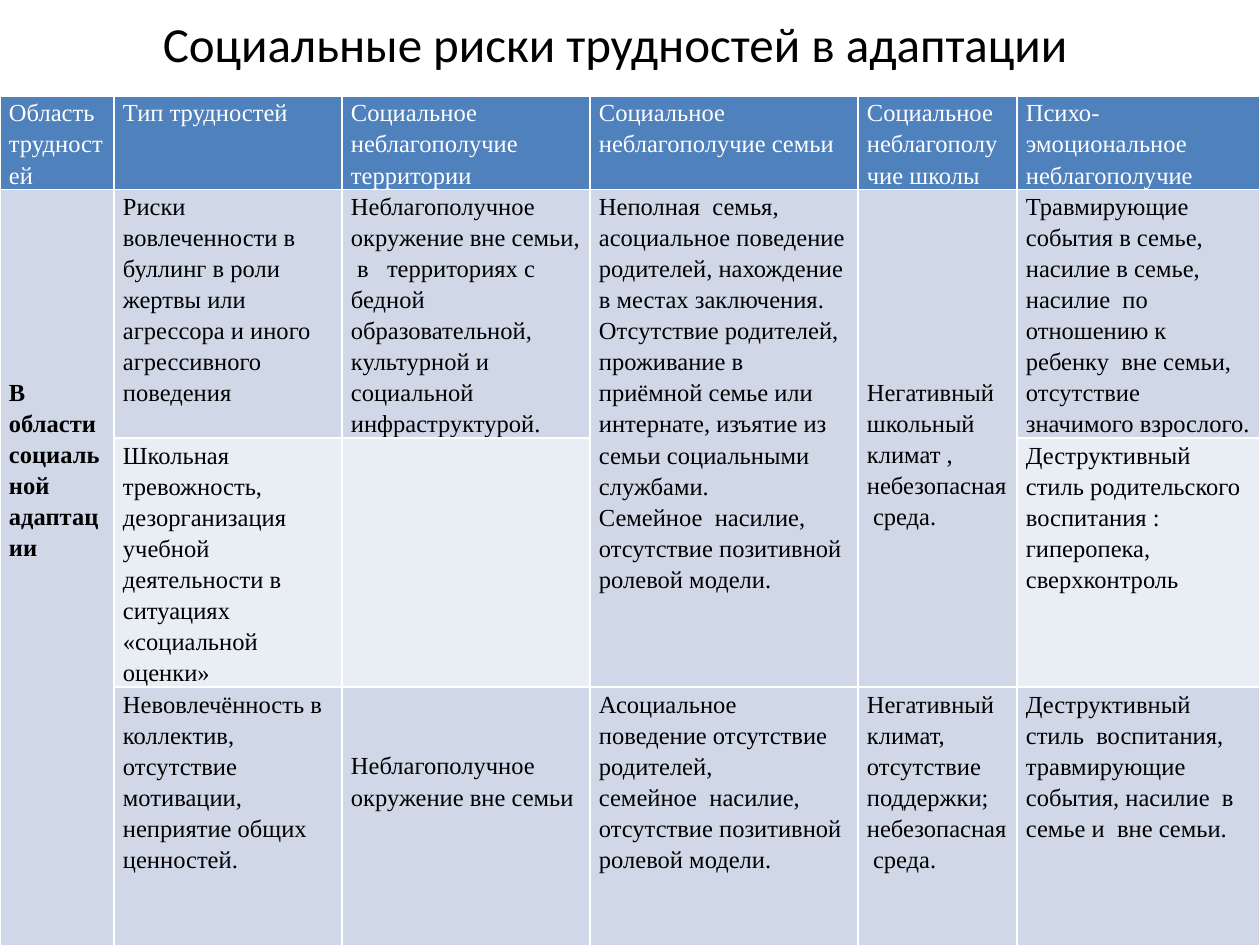
from pptx import Presentation
from pptx.dml.color import RGBColor
from pptx.enum.text import MSO_ANCHOR, PP_ALIGN
from pptx.util import Pt

PX = 914400 // 126
MIDDLE, TOP = MSO_ANCHOR.MIDDLE, MSO_ANCHOR.TOP
CENTER = PP_ALIGN.CENTER
TITLE_ONLY = 5
COLORS = {"header": "4F81BD", "band": "D0D8E8", "light": "E9EDF4",
          "white": "FFFFFF", "black": "000000"}
TITLE = "Социальные риски трудностей в адаптации "
COLUMN_WIDTHS = [114, 228, 248, 268, 159, 243]
ROW_HEIGHTS = [93, 248, 249, 306]
LINE_HEIGHT = 31
SIDE_MARGIN = 9
MERGES = [((1, 0), (3, 0)), ((1, 3), (2, 3)), ((1, 4), (2, 4))]
LINES_ABOVE = {(1, 0): 6, (1, 4): 6, (3, 2): 2}
RISKS = [
    ["Область трудностей", "Тип трудностей",
     "Социальное неблагополучие территории",
     "Социальное неблагополучие семьи",
     "Социальное неблагополучие школы",
     "Психо-эмоциональное неблагополучие"],
    ["В области социальной адаптации",
     "Риски вовлеченности в буллинг в роли жертвы или агрессора и иного "
     "агрессивного поведения",
     "Неблагополучное окружение вне семьи,  в   территориях с бедной "
     "образовательной, культурной и социальной инфраструктурой.",
     "Неполная  семья, асоциальное поведение родителей, нахождение в местах "
     "заключения.\nОтсутствие родителей, проживание в приёмной семье или "
     "интернате, изъятие из семьи социальными службами.\n"
     "Семейное  насилие, отсутствие позитивной ролевой модели.",
     "Негативный  школьный  климат , небезопасная  среда.",
     "Травмирующие  события в семье,\nнасилие в семье,\n"
     "насилие  по отношению к ребенку  вне семьи,\n"
     "отсутствие значимого взрослого."],
    ["",
     "Школьная тревожность,   дезорганизация  учебной деятельности в "
     "ситуациях «социальной оценки»",
     "", "", "",
     "Деструктивный  стиль родительского воспитания : гиперопека, "
     "сверхконтроль"],
    ["",
     "Невовлечённость в коллектив, отсутствие мотивации, неприятие общих "
     "ценностей.",
     "Неблагополучное окружение вне семьи",
     "Асоциальное поведение отсутствие родителей,\n"
     "семейное  насилие, отсутствие позитивной ролевой модели.",
     "Негативный   климат, отсутствие  поддержки; небезопасная  среда.",
     "Деструктивный стиль  воспитания,\n"
     "травмирующие события, насилие  в семье и  вне семьи."],
]


def format_run(run, font_name, size, color, bold=False):
    """Set the typeface, size, colour and weight of a run."""
    run.font.name = font_name
    run.font.size = Pt(size)
    run.font.bold = bold
    run.font.color.rgb = RGBColor.from_string(COLORS[color])


def place_title(slide, left, top, width, height):
    """Fill the title placeholder and fit it to the given box."""
    title = slide.shapes.title
    title.left, title.top = left * PX, top * PX
    title.width, title.height = width * PX, height * PX
    title.text_frame.text = TITLE
    title.text_frame.vertical_anchor = MIDDLE
    heading = title.text_frame.paragraphs[0]
    heading.alignment = CENTER
    format_run(heading.runs[0], "Calibri", 28, "black")


def fill_cell(cell, row, column, wording):
    """Write one cell in the style of its row and column."""
    fill_name = ("header", "band", "light", "band")[row]
    cell.fill.solid()
    cell.fill.fore_color.rgb = RGBColor.from_string(COLORS[fill_name])
    cell.vertical_anchor = TOP
    cell.margin_left = cell.margin_right = SIDE_MARGIN * PX
    cell.margin_top = LINES_ABOVE.get((row, column), 0) * LINE_HEIGHT * PX
    cell.margin_bottom = 0
    cell.text_frame.text = wording
    for paragraph in cell.text_frame.paragraphs:
        paragraph.line_spacing = 1.15
        for run in paragraph.runs:
            format_run(run, "Times New Roman", 14,
                       "black" if row else "white", row > 0 and column == 0)


def place_risk_table(slide, left, top):
    """Build the table of risks from its top left corner."""
    frame = slide.shapes.add_table(
        len(ROW_HEIGHTS), len(COLUMN_WIDTHS), left * PX, top * PX,
        sum(COLUMN_WIDTHS) * PX, sum(ROW_HEIGHTS) * PX)
    table = frame.table
    for column, width in zip(table.columns, COLUMN_WIDTHS):
        column.width = width * PX
    for row, height in zip(table.rows, ROW_HEIGHTS):
        row.height = height * PX
    for first, last in MERGES:
        table.cell(*first).merge(table.cell(*last))
    for row, wordings in enumerate(RISKS):
        for column, wording in enumerate(wordings):
            fill_cell(table.cell(row, column), row, column, wording)


def main():
    """Build and save the slide."""
    presentation = Presentation()
    presentation.slide_width = 1260 * PX
    presentation.slide_height = 945 * PX
    slide = presentation.slides.add_slide(
        presentation.slide_layouts[TITLE_ONLY])
    place_title(slide, 44, 0, 1153, 86)
    place_risk_table(slide, 0, 96)
    presentation.save("out.pptx")


if __name__ == "__main__":
    main()
